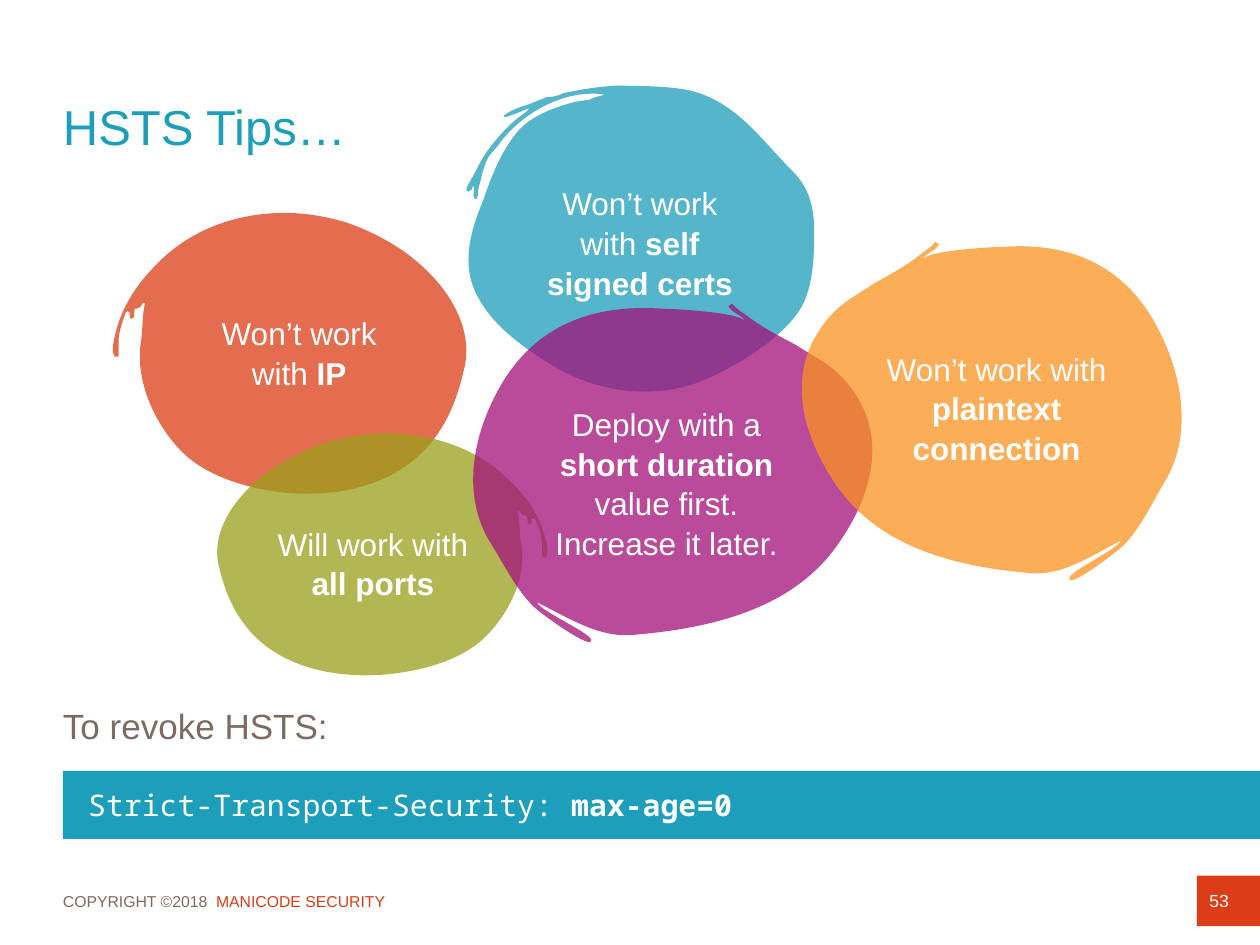
from dataclasses import dataclass
from typing import NamedTuple

from lxml.etree import SubElement
from pptx import Presentation
from pptx.dml.color import RGBColor
from pptx.enum.shapes import MSO_SHAPE
from pptx.enum.text import MSO_ANCHOR, PP_ALIGN
from pptx.oxml.ns import qn
from pptx.util import Pt


@dataclass(frozen=True)
class Theme:
    sans: str = "Arial"
    mono: str = "Noto Sans Mono"
    teal: str = "1D9EBA"
    red: str = "DB3D16"
    olive: str = "9A9F1A"
    purple: str = "A21079"
    orange: str = "FB921F"
    grey: str = "7A6C62"
    white: str = "FFFFFF"
    title: int = 28
    body: int = 20
    label: int = 18
    code: int = 17
    number: int = 10
    footer: int = 9
    blob_opacity: int = 75


T = Theme()


class Box(NamedTuple):
    left: float
    top: float
    width: float
    height: float

    def lengths(self) -> list:
        return [Pt(v) for v in self]


class Run(NamedTuple):
    text: str
    bold: bool = False
    color: str = T.white


class Outline(NamedTuple):
    """A closed path on its own grid: 2 numbers make a line, 6 a cubic curve."""
    grid: Box
    start: tuple
    segments: list


class Blob(NamedTuple):
    outline: Outline
    box: Box
    color: str
    label_box: Box
    runs: list
    flip: bool = False


SPLASH = Outline(Box(368, 68, 279, 279), (487, 68), [
    (503, 68, 519, 68, 536, 70), (580, 74, 603, 110, 629, 136),
    (642, 149, 645, 163, 646, 179), (646, 198, 646, 219, 639, 237),
    (628, 265, 584, 291, 555, 303), (518, 317, 475, 311, 442, 292),
    (413, 275, 383, 253, 374, 223), (368, 202, 375, 179, 383, 160),
    (390, 140, 397, 121, 411, 104), (421, 93, 435, 87, 452, 82),
    (458, 80, 463, 80, 468, 79), (470, 78, 472, 77, 473, 77),
    (475, 76, 478, 76, 480, 75), (444, 70, 411, 94, 397, 113),
    (394, 118, 388, 122, 386, 128), (383, 134, 382, 142, 380, 148),
    (379, 151, 380, 156, 378, 158), (376, 157),
    (375, 153, 377, 151, 376, 148), (375, 148),
    (375, 150, 374, 151, 372, 152), (370, 151),
    (369, 150, 377, 137, 378, 135), (384, 121, 397, 106, 408, 96),
    (411, 93, 417, 90, 420, 86), (419, 86),
    (417, 87, 403, 93, 400, 93), (398, 90, 415, 84, 419, 83),
    (424, 81, 429, 79, 434, 77), (439, 77, 443, 76, 447, 74),
    (460, 71, 474, 69, 487, 68)])

LOOP = Outline(Box(88, 169, 291, 230), (226, 169), [
    (188, 169, 152, 182, 126, 208), (118, 216, 110, 225, 104, 235),
    (98, 245, 94, 254, 91, 267), (90, 272, 88, 280, 91, 283), (94, 283),
    (94, 279, 94, 275, 94, 272), (94, 265, 96, 259, 98, 253),
    (99, 251, 99, 248, 101, 247), (103, 248),
    (103, 249, 102, 252, 104, 253), (106, 252),
    (107, 250, 106, 246, 107, 245), (110, 245, 110, 244, 112, 243),
    (112, 242, 113, 241, 114, 240), (115, 241),
    (115, 243, 114, 244, 114, 246), (113, 254, 113, 262, 112, 270),
    (107, 299, 120, 331, 140, 354), (153, 369, 172, 379, 194, 385),
    (244, 399, 305, 393, 339, 355), (355, 337, 363, 316, 368, 294),
    (379, 253, 344, 211, 305, 190), (294, 184, 281, 178, 269, 175),
    (254, 171, 240, 169, 226, 169)])

DROP = Outline(Box(368, 241, 330, 274), (581, 241), [
    (579, 242, 579, 242, 578, 243), (581, 249, 590, 250, 591, 255),
    (589, 248, 533, 245, 525, 245), (466, 241, 419, 261, 392, 316),
    (373, 354, 368, 398, 390, 432), (400, 448, 408, 465, 422, 480),
    (425, 484, 466, 514, 469, 509), (473, 504, 430, 486, 426, 478),
    (449, 489, 474, 506, 501, 504), (563, 499, 629, 484, 665, 432),
    (684, 405, 698, 371, 690, 338), (686, 321, 674, 303, 660, 292),
    (651, 285, 641, 280, 632, 274), (619, 267, 607, 261, 596, 253),
    (591, 249, 585, 246, 581, 241)])

BACK_BLOBS = [
    Blob(SPLASH, Box(265, 49, 201, 201), T.teal, Box(293, 100.8, 145.4, 72.7),
         [Run("Won’t work\nwith "), Run("self\nsigned certs", True)]),
    Blob(LOOP, Box(63.4, 121.7, 209.5, 165.6), T.red, Box(115.9, 175, 110.2, 51.1),
         [Run("Won’t work with "), Run("IP", True)]),
    Blob(LOOP, Box(118.1, 247.7, 195.8, 142.6), T.olive, Box(143.3, 295.2, 139.7, 51.1),
         [Run("Will work with\n"), Run("all ports", True)], flip=True),
]
FRONT_BLOBS = [
    Blob(DROP, Box(265, 173.5, 237.6, 197.3), T.purple, Box(299.5, 226.8, 162.7, 94.3),
         [Run("Deploy with a "), Run("short duration ", True),
          Run("value first. Increase it later.")]),
    Blob(DROP, Box(454.3, 138.2, 226.1, 197.3), T.orange, Box(496.1, 195.1, 146.9, 72.7),
         [Run("Won’t work with "), Run("plaintext connection", True)], flip=True),
]


def set_fill(sp, color: str) -> None:
    sp.shadow.inherit = False
    sp.fill.solid()
    sp.fill.fore_color.rgb = RGBColor.from_string(color)
    sp.line.fill.background()


def write(sp, runs: list, size: int, font: str = T.sans, align=PP_ALIGN.LEFT,
          anchor=MSO_ANCHOR.MIDDLE, insets=(7.2, 3.6, 7.2, 3.6), spacing: float = 1.0) -> None:
    tf = sp.text_frame
    tf.word_wrap = True
    tf.vertical_anchor = anchor
    tf.margin_left, tf.margin_top, tf.margin_right, tf.margin_bottom = map(Pt, insets)
    p = tf.paragraphs[0]
    p.alignment = align
    p.line_spacing = spacing
    for run in runs:
        for i, line in enumerate(run.text.split("\n")):
            if i:
                p.add_line_break()
            if line:
                r = p.add_run()
                r.text = line
                r.font.name, r.font.size, r.font.bold = font, Pt(size), run.bold
                r.font.color.rgb = RGBColor.from_string(run.color)


def add_text(s, box: Box, runs: list, size: int, **style) -> None:
    write(s.shapes.add_textbox(*box.lengths()), runs, size, **style)


def add_bar(s, box: Box, color: str, runs: list, size: int, **style) -> None:
    sp = s.shapes.add_shape(MSO_SHAPE.RECTANGLE, *box.lengths())
    set_fill(sp, color)
    write(sp, runs, size, **style)


def bend(sp, segments: list) -> None:
    """Join each three lines drawn through control points into one cubic curve."""
    lines = iter(list(sp.element.iter(qn("a:lnTo"))))
    for seg in segments:
        group = [next(lines) for _ in range(len(seg) // 2)]
        if len(group) == 3:
            curve = group[0].makeelement(qn("a:cubicBezTo"))
            group[0].addprevious(curve)
            for line in group:
                curve.append(line[0])
                line.getparent().remove(line)


def add_blob(s, blob: Blob) -> None:
    (grid, start, segments), box = blob.outline, blob.box
    points = []
    for seg in [start, *segments]:
        for x, y in zip(seg[::2], seg[1::2]):
            u, v = (x - grid.left) / grid.width, (y - grid.top) / grid.height
            u = 1 - u if blob.flip else u
            points.append((Pt(box.left + u * box.width), Pt(box.top + v * box.height)))
    builder = s.shapes.build_freeform(*points[0])
    builder.add_line_segments(points[1:], close=True)
    sp = builder.convert_to_shape()
    bend(sp, segments)
    set_fill(sp, blob.color)
    color = next(sp.element.spPr.iter(qn("a:srgbClr")))
    SubElement(color, qn("a:alpha"), val=str(T.blob_opacity * 1000))
    add_text(s, blob.label_box, blob.runs, T.label, align=PP_ALIGN.CENTER,
             anchor=MSO_ANCHOR.TOP, spacing=1.05)


def main() -> None:
    prs = Presentation()
    prs.slide_width, prs.slide_height = Pt(720), Pt(540)
    s = prs.slides.add_slide(prs.slide_layouts[6])
    flush = (0, 0, 0, 0)

    add_text(s, Box(36, 500.4, 648, 28.8),
             [Run("COPYRIGHT ©2018  ", color=T.grey), Run("MANICODE SECURITY", color=T.red)],
             T.footer, insets=flush)
    for blob in BACK_BLOBS:
        add_blob(s, blob)
    add_text(s, Box(36, 36, 648, 72), [Run("HSTS Tips…", color=T.teal)],
             T.title, insets=flush)
    add_text(s, Box(36, 402.5, 648, 38.2), [Run("To revoke HSTS:", color=T.grey)],
             T.body, anchor=MSO_ANCHOR.TOP, insets=flush)
    add_bar(s, Box(684, 500.4, 36, 28.8), T.red, [Run("53")], T.number)
    add_bar(s, Box(36, 440.6, 684, 38.9), T.teal,
            [Run("Strict-Transport-Security: "), Run("max-age=0", True)],
            T.code, font=T.mono, insets=(14.4, 3.6, 7.2, 3.6))
    for blob in FRONT_BLOBS:
        add_blob(s, blob)
    prs.save("out.pptx")


if __name__ == "__main__":
    main()
